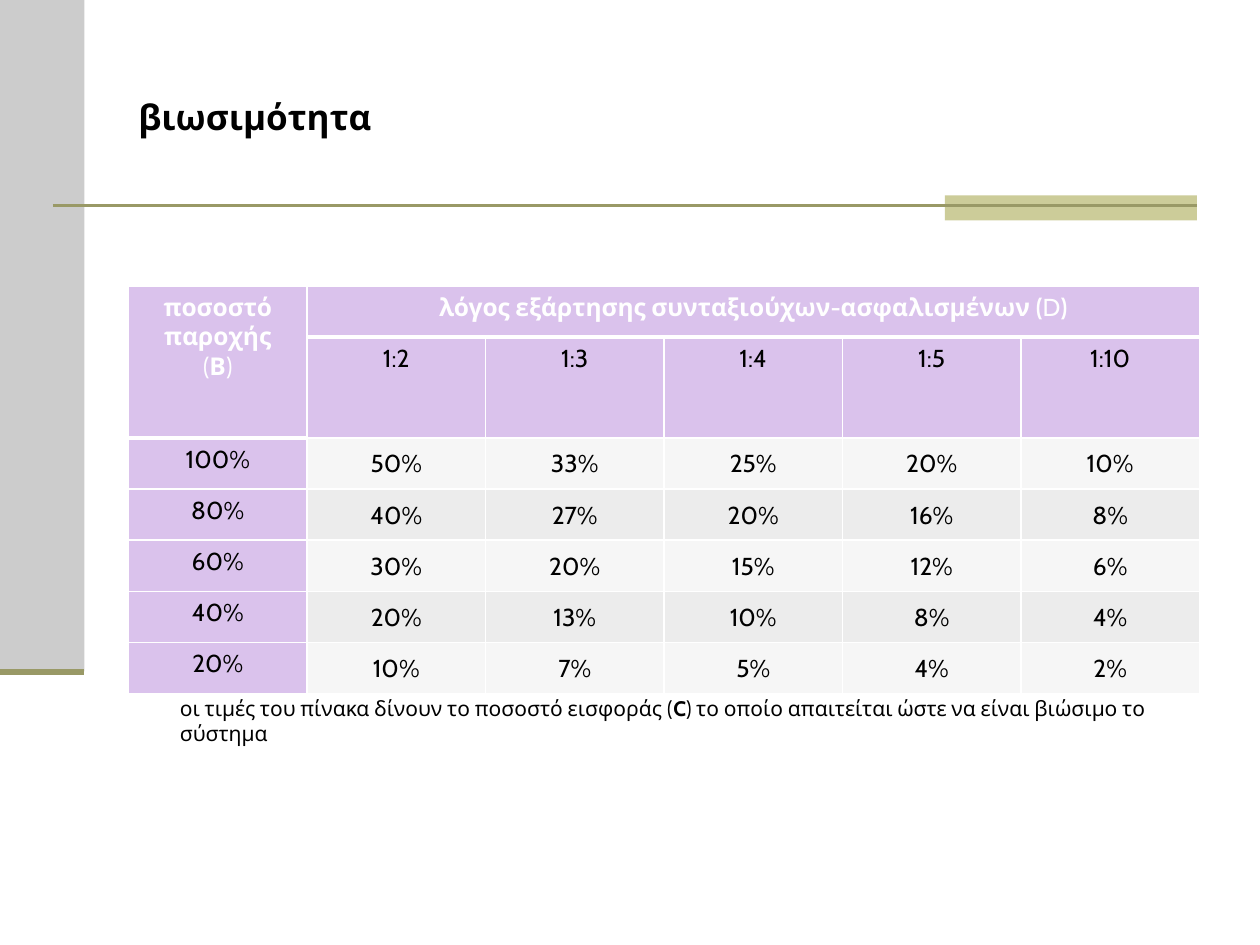
from pptx import Presentation
from pptx.dml.color import RGBColor
from pptx.enum.shapes import MSO_CONNECTOR as Connector, MSO_SHAPE as Shape
from pptx.enum.text import MSO_ANCHOR as Anchor, PP_ALIGN as Align
from pptx.oxml.ns import qn
from pptx.util import Inches, Pt
from lxml.etree import SubElement

FONT = "Cabin"
BLACK, WHITE = "000000", "FFFFFF"
GRAY, SAND, OLIVE = "CCCCCC", "CCCC99", "999966"
LILAC, BANDS = "DAC2EC", ("F6F6F6", "ECECEC")

RATIOS = ["1:2", "1:3", "1:4", "1:5", "1:10"]
CONTRIBUTIONS = {
    "100%": ["50%", "33%", "25%", "20%", "10%"],
    "80%": ["40%", "27%", "20%", "16%", "8%"],
    "60%": ["30%", "20%", "15%", "12%", "6%"],
    "40%": ["20%", "13%", "10%", "8%", "4%"],
    "20%": ["10%", "7%", "5%", "4%", "2%"],
}


def color(value):
    return RGBColor.from_string(value)


def write(para, spans, size, ink=BLACK, align=Align.LEFT):
    """Fill a paragraph with (text, bold) spans."""
    para.alignment = align
    para.font.name, para.font.size = FONT, Pt(size)
    para.font.color.rgb = color(ink)
    for text, bold in spans:
        span = para.add_run()
        span.text, span.font.bold = text, bold


def add_block(page, left, top, width, height, fill):
    block = page.shapes.add_shape(
        Shape.RECTANGLE, Inches(left), Inches(top), Inches(width), Inches(height))
    block.shadow.inherit = False
    block.fill.solid()
    block.fill.fore_color.rgb = color(fill)
    block.line.fill.background()


def add_rule(page, left, right, y, weight):
    rule = page.shapes.add_connector(
        Connector.STRAIGHT, Inches(left), Inches(y), Inches(right), Inches(y))
    rule.line.color.rgb = color(OLIVE)
    rule.line.width = Pt(weight)
    SubElement(rule._element.spPr, qn("a:effectLst"))


def add_text(page, left, top, width, height, spans, size, anchor=Anchor.TOP):
    box = page.shapes.add_textbox(
        Inches(left), Inches(top), Inches(width), Inches(height))
    frame = box.text_frame
    frame.word_wrap = True
    frame.vertical_anchor = anchor
    write(frame.paragraphs[0], spans, size)


def add_decoration(page):
    add_block(page, 0, 0, 0.67, 5.33, GRAY)
    add_block(page, 7.5, 1.55, 2, 0.2, SAND)
    add_rule(page, 0.42, 9.5, 1.63, 1.5)
    add_rule(page, 0, 0.67, 5.33, 3.5)


def style_cell(cell, fill, top=1, bottom=1):
    """Draw white borders, then the fill, in the order the schema asks for."""
    props = cell._tc.get_or_add_tcPr()
    for side, weight in (("L", 1), ("R", 1), ("T", top), ("B", bottom)):
        line = SubElement(props, qn(f"a:ln{side}"), w=str(Pt(weight)))
        solid = SubElement(line, qn("a:solidFill"))
        SubElement(solid, qn("a:srgbClr"), val=WHITE)
    cell.fill.solid()
    cell.fill.fore_color.rgb = color(fill)


def add_contribution_table(page, left, top, width, height):
    rows, cols = len(CONTRIBUTIONS) + 2, len(RATIOS) + 1
    table = page.shapes.add_table(
        rows, cols, Inches(left), Inches(top), Inches(width), Inches(height)).table
    for column in table.columns:
        column.width = Inches(width / cols)
    for row in table.rows:
        row.height = Inches(height / rows)
    table.cell(0, 0).merge(table.cell(1, 0))
    table.cell(0, 1).merge(table.cell(0, cols - 1))

    # Thick line under the headings, lower below the merged first column
    for row in range(rows):
        for col in range(cols):
            last_heading = 0 if col else 1
            is_value = row > 1 and col > 0
            style_cell(table.cell(row, col),
                       BANDS[row % 2] if is_value else LILAC,
                       top=3 if row == last_heading + 1 else 1,
                       bottom=3 if row <= last_heading else 1)

    # Merged headings
    frame = table.cell(0, 0).text_frame
    write(frame.paragraphs[0], [("ποσοστό παροχής", True)], 14, WHITE, Align.CENTER)
    write(frame.add_paragraph(), [("(", False), ("Β", True), (")", False)],
          14, WHITE, Align.CENTER)
    write(table.cell(0, 1).text_frame.paragraphs[0],
          [("λόγος εξάρτησης συνταξιούχων-ασφαλισμένων (", True), ("D", False), (")", True)],
          14, WHITE, Align.CENTER)

    # Ratios, rates and values
    lines = [["", *RATIOS]] + [[rate, *values] for rate, values in CONTRIBUTIONS.items()]
    for row, line in enumerate(lines, start=1):
        for col, text in enumerate(line):
            if not text:
                continue
            cell = table.cell(row, col)
            write(cell.text_frame.paragraphs[0], [(text, False)], 14, align=Align.CENTER)
            if row > 1 and col > 0:
                cell.vertical_anchor = Anchor.MIDDLE
                cell.margin_left = cell.margin_right = cell.margin_top = Inches(0.01)
                cell.margin_bottom = 0


def main():
    deck = Presentation()
    deck.slide_width, deck.slide_height = Inches(10), Inches(7.5)
    page = deck.slides.add_slide(deck.slide_layouts[6])
    add_decoration(page)
    add_text(page, 1, 0.3, 8.5, 1.25, [("βιωσιμότητα", True)], 20, Anchor.MIDDLE)
    add_contribution_table(page, 1.02, 2.27, 8.5, 2.84)
    add_text(page, 1.33, 5.47, 8.2, 0.3, [
        ("οι τιμές του πίνακα δίνουν το ποσοστό εισφοράς (", False), ("C", True),
        (") το οποίο απαιτείται ώστε να είναι βιώσιμο το σύστημα", False)], 12)
    deck.save("out.pptx")


if __name__ == "__main__":
    main()
